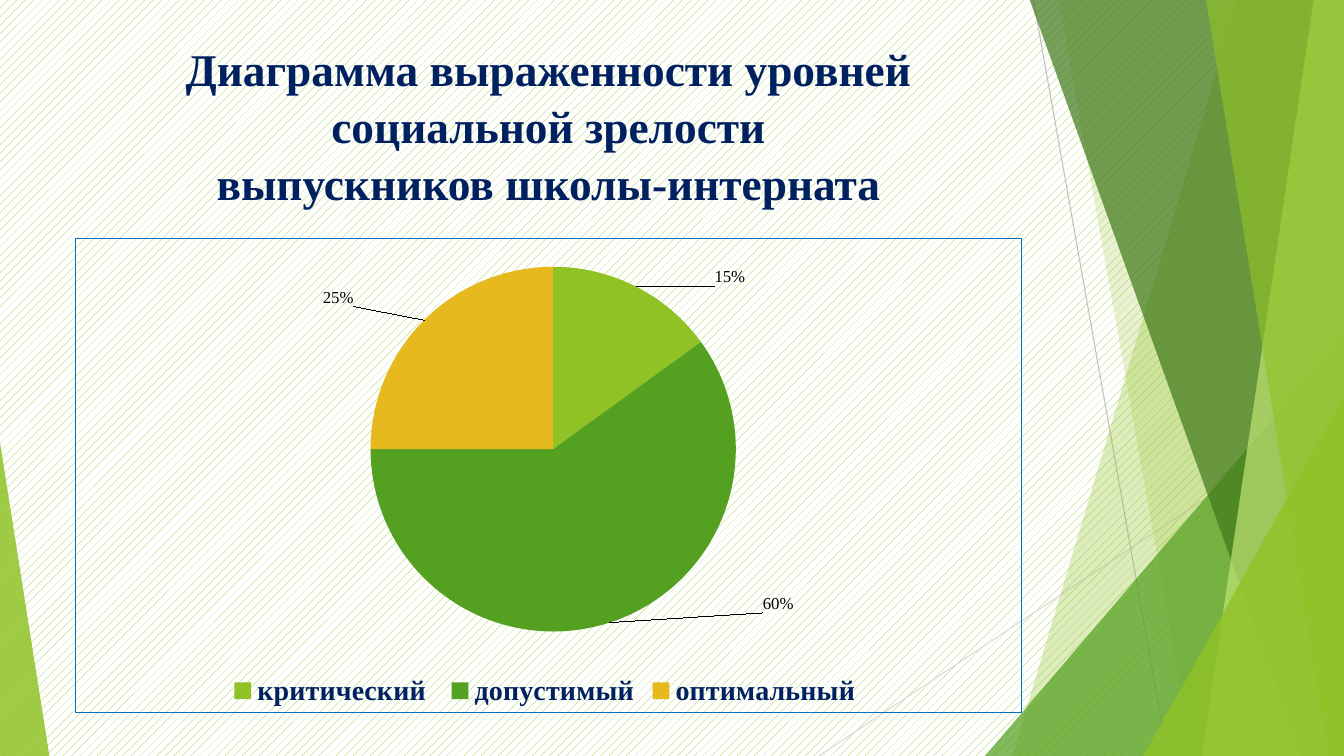
from lxml import etree
from pptx import Presentation
from pptx.chart.data import CategoryChartData
from pptx.dml.color import RGBColor
from pptx.enum.chart import XL_CHART_TYPE as ChartType, XL_LABEL_POSITION as LabelPosition
from pptx.enum.chart import XL_LEGEND_POSITION as LegendPosition
from pptx.enum.dml import MSO_PATTERN as Pattern
from pptx.enum.shapes import MSO_CONNECTOR as Connector, MSO_SHAPE as Shape
from pptx.enum.text import MSO_ANCHOR as Anchor, PP_ALIGN as Align
from pptx.oxml import parse_xml
from pptx.oxml.ns import nsdecls, qn
from pptx.util import Inches, Pt

WIDTH, HEIGHT = 13.33, 7.5
LEFT, CONTENT_WIDTH = 0.74, 9.4
LIME, GREEN, GOLD, NAVY = "90C226", "54A021", "E6B91E", "002060"
SERIF = "Times New Roman"


def rgb(code):
    return RGBColor.from_string(code)


def tint(shape, code, opacity):
    """Give a shape a translucent fill with no outline or shadow."""
    shape.shadow.inherit = False
    shape.line.fill.background()
    shape.fill.solid()
    shape.fill.fore_color.rgb = rgb(code)
    color = shape.fill._xPr.find(".//" + qn("a:srgbClr"))
    etree.SubElement(color, qn("a:alpha")).set("val", str(opacity * 1000))


prs = Presentation()
prs.slide_width, prs.slide_height = Inches(WIDTH), Inches(HEIGHT)
slide = prs.slides.add_slide(prs.slide_layouts[6])
shapes = slide.shapes

backdrop = slide.background.fill
backdrop.patterned()
backdrop.pattern = Pattern.PERCENT_20
backdrop.fore_color.rgb = rgb(LIME)
backdrop.back_color.rgb = rgb("FFFFFF")

# Thin rays behind the facets
for x1, y1, x2, y2, code in [
    (10.25, 0, 11.58, HEIGHT, "BFBFBF"),
    (WIDTH, 4.03, 8.12, HEIGHT, "D9D9D9"),
]:
    ray = shapes.add_connector(Connector.STRAIGHT, *map(Inches, (x1, y1, x2, y2)))
    ray.line.color.rgb = rgb(code)
    ray.line.width = Pt(0.75)
    etree.SubElement(ray._element.spPr, qn("a:effectLst"))

# Facets: a band is (top x, bottom x) and reaches the right edge;
# a corner is (left, width, height, apex) and stands on the bottom edge
for facet, code, opacity in [
    ((12.28, 10.04), LIME, 30),
    ((10.5, 11.83), LIME, 20),
    ((9.77, 3.56, 4.17, 1), GREEN, 72),
    ((10.21, 12.91), "3F7819", 70),
    ((13.03, 11.92), "C0E474", 70),
    ((11.96, 13.18), LIME, 65),
    ((11.34, 1.99, 3.57, 1), LIME, 80),
    ((0, 0.49, 3.11, 0), LIME, 85),
]:
    if len(facet) == 2:
        top_x, bottom_x = facet
        outline = shapes.build_freeform(Inches(top_x), Inches(-0.01))
        outline.add_line_segments(
            [(Inches(x), Inches(y)) for x, y in
             [(WIDTH, -0.01), (WIDTH, HEIGHT), (bottom_x, HEIGHT)]])
        piece = outline.convert_to_shape()
    else:
        left, width, height, apex = facet
        piece = shapes.add_shape(
            Shape.ISOSCELES_TRIANGLE,
            *map(Inches, (left, HEIGHT - height, width, height)))
        piece.adjustments[0] = apex
    tint(piece, code, opacity)

title = shapes.add_textbox(*map(Inches, (LEFT, 0.36, CONTENT_WIDTH, 1.74))).text_frame
title.word_wrap = True
title.vertical_anchor = Anchor.MIDDLE
heading = title.paragraphs[0]
heading.text = "Диаграмма выраженности уровней социальной зрелости\vвыпускников школы-интерната"
heading.alignment = Align.CENTER
heading.line_spacing = 1.05
heading.font.name, heading.font.size, heading.font.bold = SERIF, Pt(32.4), True
heading.font.color.rgb = rgb(NAVY)

levels = CategoryChartData(number_format="0%")
levels.categories = ["критический ", "допустимый", "оптимальный "]
levels.add_series("Series 1", (0.15, 0.6, 0.25))
chart = shapes.add_chart(
    ChartType.PIE, *map(Inches, (LEFT, 2.36, CONTENT_WIDTH, 4.71)), levels).chart
chart.has_title = False
chart.font.name, chart.font.size = "Cabin", Pt(10)
chart.font.color.rgb = rgb("000000")

chart.has_legend = True
legend = chart.legend
legend.position = LegendPosition.BOTTOM
legend.include_in_layout = False
legend.font.name, legend.font.size, legend.font.bold = SERIF, Pt(20), True
legend.font.color.rgb = rgb(NAVY)

pie = chart.plots[0]
pie.vary_by_categories = True
series = pie.series[0]
labels = series.data_labels
labels.show_value = True
labels.show_percentage = False
labels.number_format, labels.number_format_is_linked = "0%", False
labels.font.name, labels.font.size = SERIF, Pt(12)

# Slice colours, and label shifts as shares of the chart's size
for index, (code, dx, dy) in enumerate(
        [(LIME, 0.08, 0.01), (GREEN, 0.16, -0.07), (GOLD, -0.07, -0.02)]):
    point = series.points[index]
    point.format.fill.solid()
    point.format.fill.fore_color.rgb = rgb(code)
    label = point.data_label
    label.font.name, label.font.size = SERIF, Pt(12)
    label.position = LabelPosition.OUTSIDE_END
    shift = parse_xml(
        f'<c:layout {nsdecls("c")}><c:manualLayout>'
        f'<c:x val="{dx}"/><c:y val="{dy}"/></c:manualLayout></c:layout>')
    series._element.findall(".//" + qn("c:dLbl"))[index].find(qn("c:idx")).addnext(shift)

plot_area = chart._chartSpace.chart.plotArea
for old_layout in plot_area.findall(qn("c:layout")):
    plot_area.remove(old_layout)
plot_area.insert(0, parse_xml(
    f'<c:layout {nsdecls("c")}><c:manualLayout><c:layoutTarget val="inner"/>'
    '<c:xMode val="edge"/><c:yMode val="edge"/><c:x val="0.31"/><c:y val="0.06"/>'
    '<c:w val="0.39"/><c:h val="0.77"/></c:manualLayout></c:layout>'))
chart._chartSpace.find(qn("c:txPr")).addprevious(parse_xml(
    f'<c:spPr {nsdecls("c", "a")}><a:noFill/><a:ln w="{Pt(0.75)}"><a:solidFill>'
    '<a:srgbClr val="0070C0"/></a:solidFill></a:ln></c:spPr>'))

prs.save("out.pptx")
